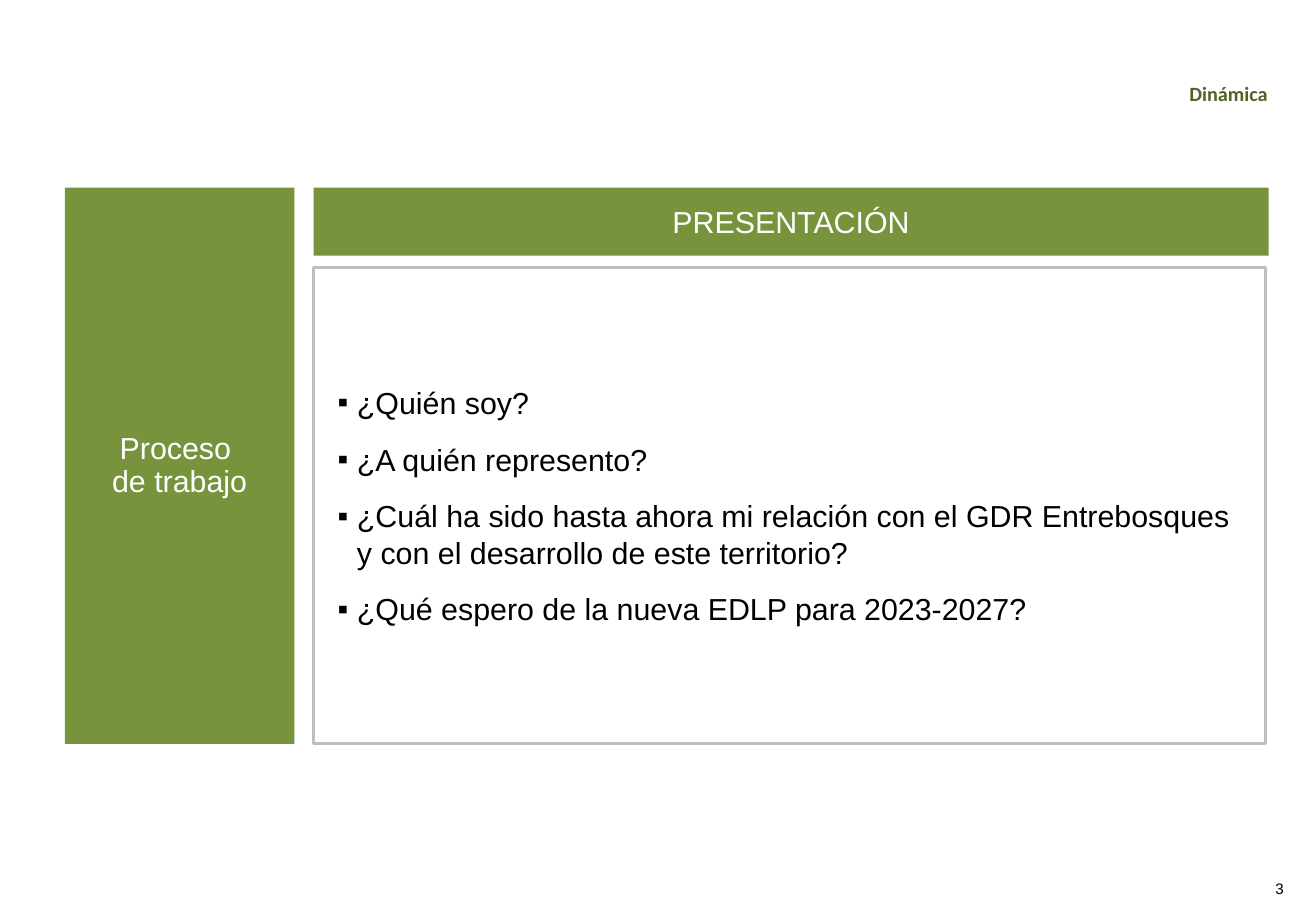
"""Build the slide that introduces the working process of the session."""

from dataclasses import dataclass
from typing import Optional

from lxml.etree import SubElement
from pptx import Presentation
from pptx.dml.color import RGBColor
from pptx.enum.shapes import MSO_SHAPE as Preset
from pptx.enum.text import MSO_ANCHOR as Anchor, MSO_AUTO_SIZE as AutoSize, PP_ALIGN as Align
from pptx.oxml.ns import qn
from pptx.util import Pt

GREEN = RGBColor(0x77, 0x93, 0x3C)
DARK_GREEN = RGBColor(0x4F, 0x62, 0x28)
GREY = RGBColor(0xBF, 0xBF, 0xBF)
BLACK = RGBColor(0, 0, 0)
WHITE = RGBColor(0xFF, 0xFF, 0xFF)

TOP = 111.2
RIGHT_COLUMN = 185.9
QUESTIONS = """¿Quién soy?
¿A quién represento?
¿Cuál ha sido hasta ahora mi relación con el GDR Entrebosques y con el desarrollo de este territorio?
¿Qué espero de la nueva EDLP para 2023-2027?"""


@dataclass(frozen=True)
class Panel:
    left: float
    top: float
    width: float
    height: float
    text: str
    fill: Optional[RGBColor] = GREEN
    line: Optional[RGBColor] = None
    color: RGBColor = WHITE
    align: Align = Align.CENTER
    spacing: float = 1.0
    after: float = 0
    bullet: str = ""
    margins: tuple[float, float] = (7.2, 3.6)


PANELS = (
    Panel(RIGHT_COLUMN, 158.6, 564.2, 282.2, QUESTIONS, fill=None, line=GREY, color=BLACK,
          align=Align.LEFT, after=12, bullet="▪", margins=(14.2, 8.6)),
    Panel(38.4, TOP, 136.1, 329.8, "Proceso \nde trabajo", spacing=0.9),
    Panel(RIGHT_COLUMN, TOP, 566, 40.3, "PRESENTACIÓN"),
)


def add_bullet(para, mark: str, indent: float = 11.5) -> None:
    properties = para._p.get_or_add_pPr()
    properties.set("marL", str(Pt(indent)))
    properties.set("indent", str(-Pt(indent)))
    SubElement(properties, qn("a:buFont")).set("typeface", "Arial")
    SubElement(properties, qn("a:buChar")).set("char", mark)


def write(shape, text: str, *, size: float = 18, font: str = "Arial", color: RGBColor = BLACK,
          bold: bool = False, align: Align = Align.CENTER, spacing: float = 1.0,
          after: float = 0, bullet: str = "",
          margins: tuple[float, float] = (7.2, 3.6)) -> None:
    frame = shape.text_frame
    frame.word_wrap = True
    frame.auto_size = AutoSize.NONE
    frame.vertical_anchor = Anchor.MIDDLE
    frame.margin_left = frame.margin_right = Pt(margins[0])
    frame.margin_top = frame.margin_bottom = Pt(margins[1])
    frame.text = text
    for para in frame.paragraphs:
        para.alignment = align
        para.line_spacing = spacing
        para.space_before = Pt(0)
        para.space_after = Pt(after)
        if bullet:
            add_bullet(para, bullet)
        for span in para.runs:
            span.font.name = font
            span.font.size = Pt(size)
            span.font.bold = bold
            span.font.color.rgb = color


def add_panel(page, panel: Panel) -> None:
    box = page.shapes.add_shape(Preset.RECTANGLE, Pt(panel.left), Pt(panel.top),
                                Pt(panel.width), Pt(panel.height))
    box.shadow.inherit = False
    if panel.fill is None:
        box.fill.background()
    else:
        box.fill.solid()
        box.fill.fore_color.rgb = panel.fill
    if panel.line is None:
        box.line.fill.background()
    else:
        box.line.color.rgb = panel.line
        box.line.width = Pt(1.5)
    write(box, panel.text, color=panel.color, align=panel.align, spacing=panel.spacing,
          after=panel.after, bullet=panel.bullet, margins=panel.margins)


def add_title(page, text: str) -> None:
    title = page.shapes.title
    title.left, title.top, title.width, title.height = Pt(690.4), Pt(46.8), Pt(75.6), Pt(19.4)
    write(title, text, size=12, font="Calibri", color=DARK_GREEN, bold=True, spacing=0.85)


def add_page_number(page, number: int) -> None:
    box = page.shapes.add_textbox(Pt(741.6), Pt(519.6), Pt(33.8), Pt(13.7))
    write(box, str(number), size=9, margins=(0, 0))


def main() -> None:
    deck = Presentation()
    deck.slide_width, deck.slide_height = Pt(780), Pt(540)
    page = deck.slides.add_slide(deck.slide_layouts[5])
    add_title(page, "Dinámica")
    for panel in PANELS:
        add_panel(page, panel)
    add_page_number(page, 3)
    deck.save("out.pptx")


if __name__ == "__main__":
    main()
